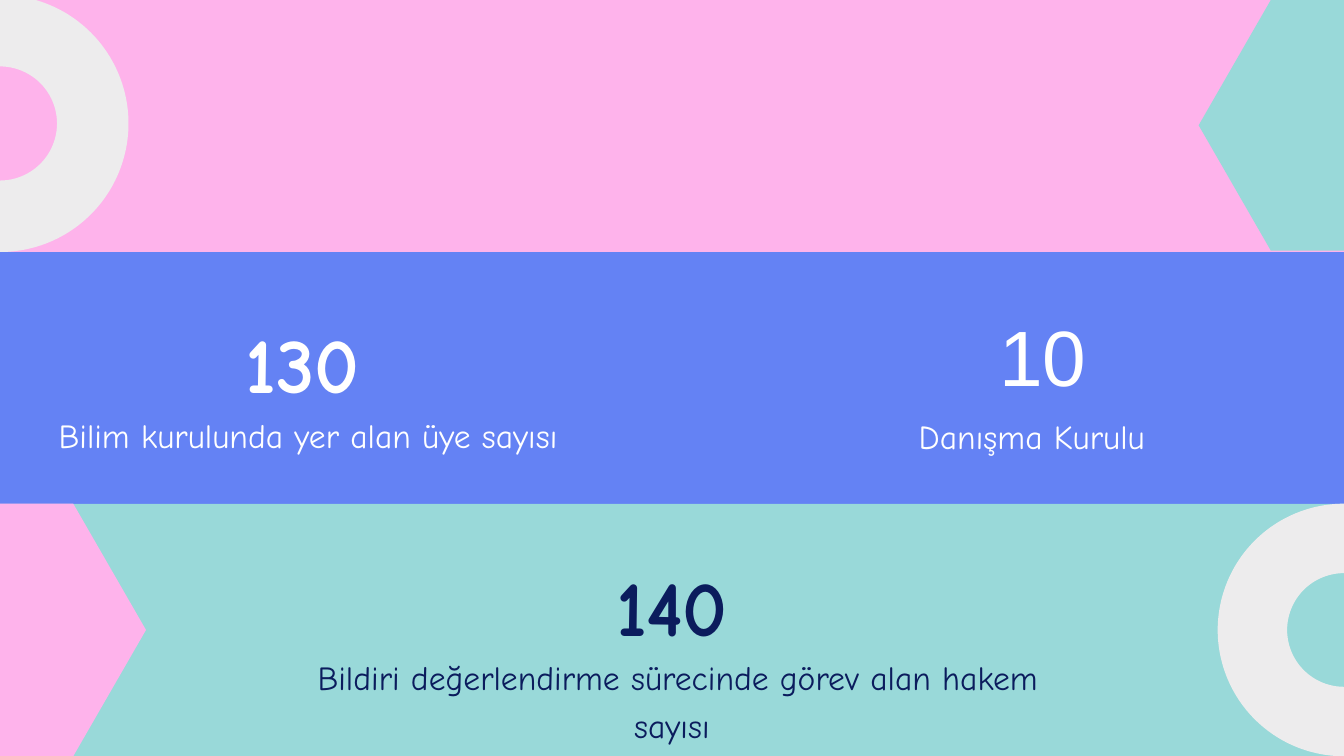
import pptx
import pptx.util
from pptx.dml.color import RGBColor
from pptx.enum.shapes import MSO_SHAPE
from pptx.enum.text import PP_ALIGN

Pt = pptx.util.Pt

COLORS = {
    "pink": "FEB3EB",
    "blue": "6482F4",
    "teal": "99D9D9",
    "gray": "EDECED",
    "white": "FFFFFF",
    "navy": "0B1C5D",
}
SLIDE_WIDTH, SLIDE_HEIGHT = 960, 540
BAND_HEIGHT = SLIDE_HEIGHT / 3

# Row, width, colour
BANDS = [(1, 995, "blue"), (0, 995, "pink"), (2, 1040, "teal")]

# Preset, centre x, centre y, width, height, adjustment, colour
ORNAMENTS = [
    (MSO_SHAPE.HEXAGON, 0.3, 450, 208, 180.4, 0.288, "pink"),
    (MSO_SHAPE.HEXAGON, 959.5, 89.5, 206.6, 179, 0.288, "teal"),
    (MSO_SHAPE.DONUT, 960, 450, 180.4, 180.4, 0.275, "gray"),
    (MSO_SHAPE.DONUT, 0, 88.2, 183.6, 183.6, 0.278, "gray"),
]

LABEL_WIDTH = 569
# Text, centre x, top, height, size, font, bold, line spacing, inset, colour
LABELS = [
    ("130", 216, 211.5, 81, 56, "Comic Neue", True, 1.2, 0, "white"),
    ("\u00a0Bilim kurulunda yer alan üye sayısı",
     216, 290.5, 35, 24, "Comic Neue", False, 1.2, 0, "white"),
    ("140", 480, 385, 81, 56, "Comic Neue", True, 1.2, 0, "navy"),
    ("\u00a0Bildiri değerlendirme sürecinde görev alan hakem sayısı",
     480, 463.5, 35, 24, "Comic Neue", False, 1.2, 0, "navy"),
    ("10", 745, 216.5, 75, 56, "Arial", False, 1, 3.6, "white"),
    ("\u00a0Danışma Kurulu",
     733, 291.5, 35, 24, "Comic Neue", False, 1.2, 0, "white"),
]


def color(name):
    return RGBColor.from_string(COLORS[name])


def add_filled(slide, preset, left, top, width, height, fill):
    shape = slide.shapes.add_shape(preset, Pt(left), Pt(top), Pt(width), Pt(height))
    shape.shadow.inherit = False
    shape.fill.solid()
    shape.fill.fore_color.rgb = color(fill)
    shape.line.fill.background()
    return shape


def add_label(slide, text, center, top, height, size, font, bold, spacing, inset, ink):
    box = slide.shapes.add_textbox(
        Pt(center - LABEL_WIDTH / 2), Pt(top), Pt(LABEL_WIDTH), Pt(height))
    frame = box.text_frame
    frame.word_wrap = True
    frame.margin_left = frame.margin_right = Pt(2 * inset)
    frame.margin_top = frame.margin_bottom = Pt(inset)
    paragraph = frame.paragraphs[0]
    paragraph.text = text
    paragraph.alignment = PP_ALIGN.CENTER
    paragraph.line_spacing = spacing
    paragraph.font.name = font
    paragraph.font.size = Pt(size)
    paragraph.font.bold = bold
    paragraph.font.color.rgb = color(ink)


def main():
    deck = pptx.Presentation()
    deck.slide_width, deck.slide_height = Pt(SLIDE_WIDTH), Pt(SLIDE_HEIGHT)
    slide = deck.slides.add_slide(deck.slide_layouts[6])

    for row, width, fill in BANDS:
        add_filled(slide, MSO_SHAPE.RECTANGLE,
                   0, row * BAND_HEIGHT, width, BAND_HEIGHT, fill)
    for preset, x, y, width, height, adjustment, fill in ORNAMENTS:
        ornament = add_filled(slide, preset, x - width / 2, y - height / 2,
                              width, height, fill)
        ornament.adjustments[0] = adjustment
    for label in LABELS:
        add_label(slide, *label)

    deck.save("out.pptx")


if __name__ == "__main__":
    main()
